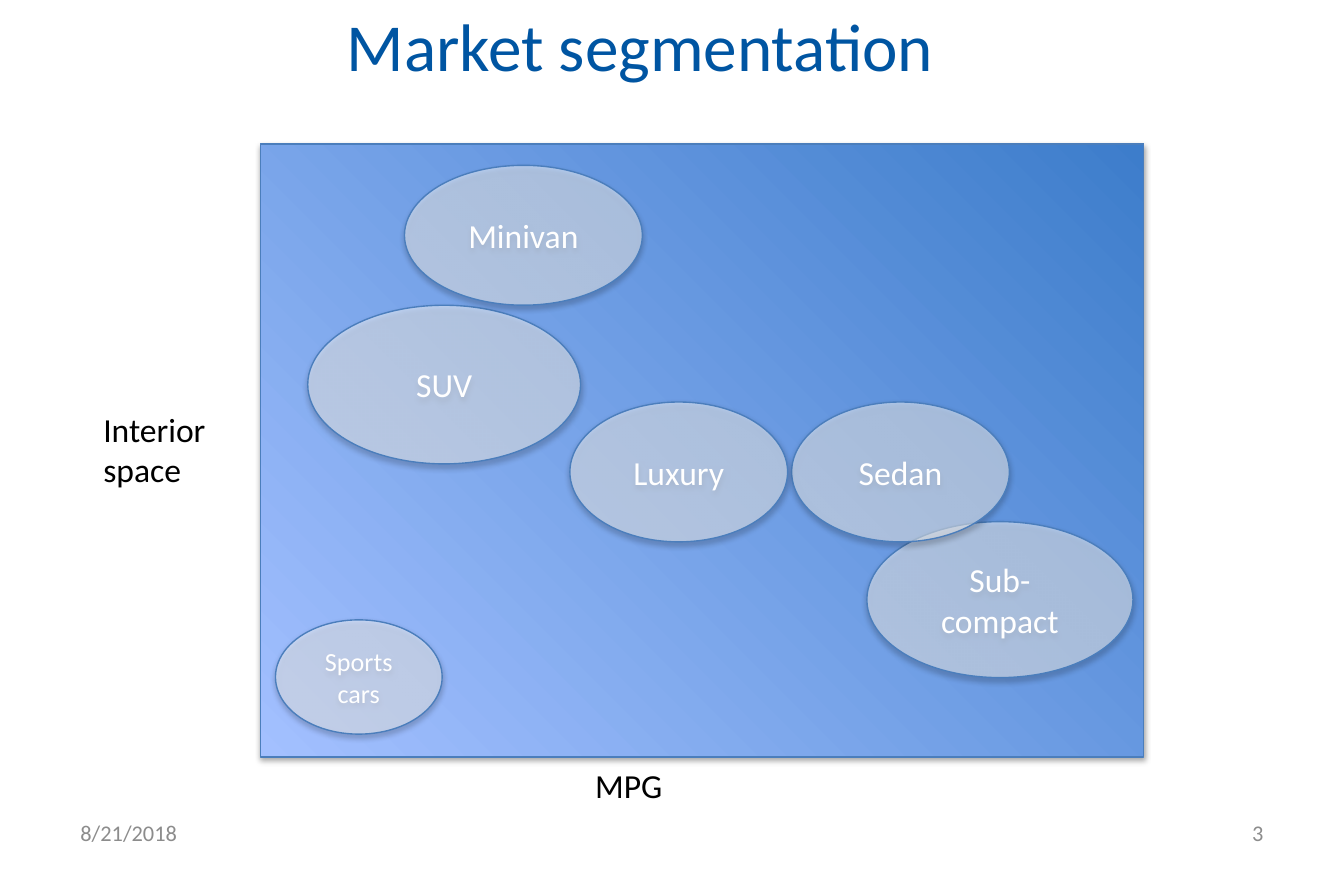
from pptx import Presentation, util as u
from pptx.dml.color import RGBColor
from pptx.enum import shapes, text
from pptx.oxml import parse_xml
from pptx.oxml.ns import nsdecls

theme = dict(
    font="Calibri", title="0055A2", ink="000000", grey="8C8C8C", white="FFFFFF",
    edge="4B7EBC", low="A3C0FF", high="3D7DCB",
    huge=36, body=18, small=14, foot=12,
)
kind = shapes.MSO_SHAPE
side = text.PP_ALIGN

deck = Presentation()
deck.slide_width, deck.slide_height = u.Inches(10), u.Inches(6.5)
col, row = deck.slide_width / 100, deck.slide_height / 65
page = deck.slides.add_slide(deck.slide_layouts[5])


def grid(x, y, w, h):
    return [round(n) for n in (x * col, y * row, w * col, h * row)]


def write(shape, words, size="body", ink="ink", align=side.LEFT,
          anchor=text.MSO_ANCHOR.MIDDLE, wrap=True):
    frame = shape.text_frame
    frame.text = words
    frame.word_wrap = wrap
    frame.auto_size = text.MSO_AUTO_SIZE.NONE if wrap else text.MSO_AUTO_SIZE.SHAPE_TO_FIT_TEXT
    frame.vertical_anchor = anchor
    for para in frame.paragraphs:
        para.alignment = align
        para.font.name = theme["font"]
        para.font.size = u.Pt(theme[size])
        para.font.color.rgb = RGBColor.from_string(theme[ink])


head = page.shapes.title
head.left, head.top, head.width, head.height = grid(24.8, 0, 75.2, 6.6)
write(head, "Market segmentation", "huge", "title")

for x, words, align in ((5, "8/21/2018", side.LEFT), (71.7, "3", side.RIGHT)):
    note = page.shapes.add_textbox(*grid(x, 60.2, 23.3, 3.5))
    write(note, words, "foot", "grey", align)

field = page.shapes.add_shape(kind.RECTANGLE, *grid(19.4, 10.7, 65.7, 45.6))
field.fill.gradient()
field.fill.gradient_angle = 45
for stop, name in zip(field.fill.gradient_stops, ("low", "high")):
    stop.color.rgb = RGBColor.from_string(theme[name])

for words, area in (("Interior\nspace", (6.7, 29.9, 11.8, 7.1)),
                    ("MPG", (43.3, 56.4, 7.8, 4))):
    axis = page.shapes.add_textbox(*grid(*area))
    write(axis, words, anchor=text.MSO_ANCHOR.TOP, wrap=False)

ovals = []
for words, area, size in (
    ("Sports cars", (20.5, 46.1, 12.4, 8.5), "small"),
    ("SUV", (22.9, 22.7, 20.3, 11.8), "body"),
    ("Minivan", (30.1, 12.3, 17.7, 10.4), "body"),
    ("Sub-compact", (64.5, 38.8, 19.8, 11.6), "body"),
    ("Sedan", (58.9, 29.9, 16.2, 10.4), "body"),
    ("Luxury", (42.4, 29.9, 16.2, 10.4), "body"),
):
    oval = page.shapes.add_shape(kind.OVAL, *grid(*area))
    oval.fill.solid()
    oval.fill.fore_color.rgb = RGBColor.from_string(theme["white"])
    tint = oval.element.spPr.xpath("./a:solidFill/a:srgbClr")[0]
    tint.append(parse_xml(f'<a:alpha {nsdecls("a")} val="50000"/>'))
    write(oval, words, size, "white", side.CENTER)
    ovals.append(oval)

for shape in [field] + ovals:
    shape.line.color.rgb = RGBColor.from_string(theme["edge"])
    shape.line.width = u.Pt(0.75)
    shape.element.spPr.append(parse_xml(
        f'<a:effectLst {nsdecls("a")}><a:outerShdw blurRad="{u.Pt(3.1)}" dist="{u.Pt(1.8)}"'
        ' dir="5400000" rotWithShape="0"><a:srgbClr val="000000"><a:alpha val="35000"/>'
        '</a:srgbClr></a:outerShdw></a:effectLst>'))

deck.save("out.pptx")
